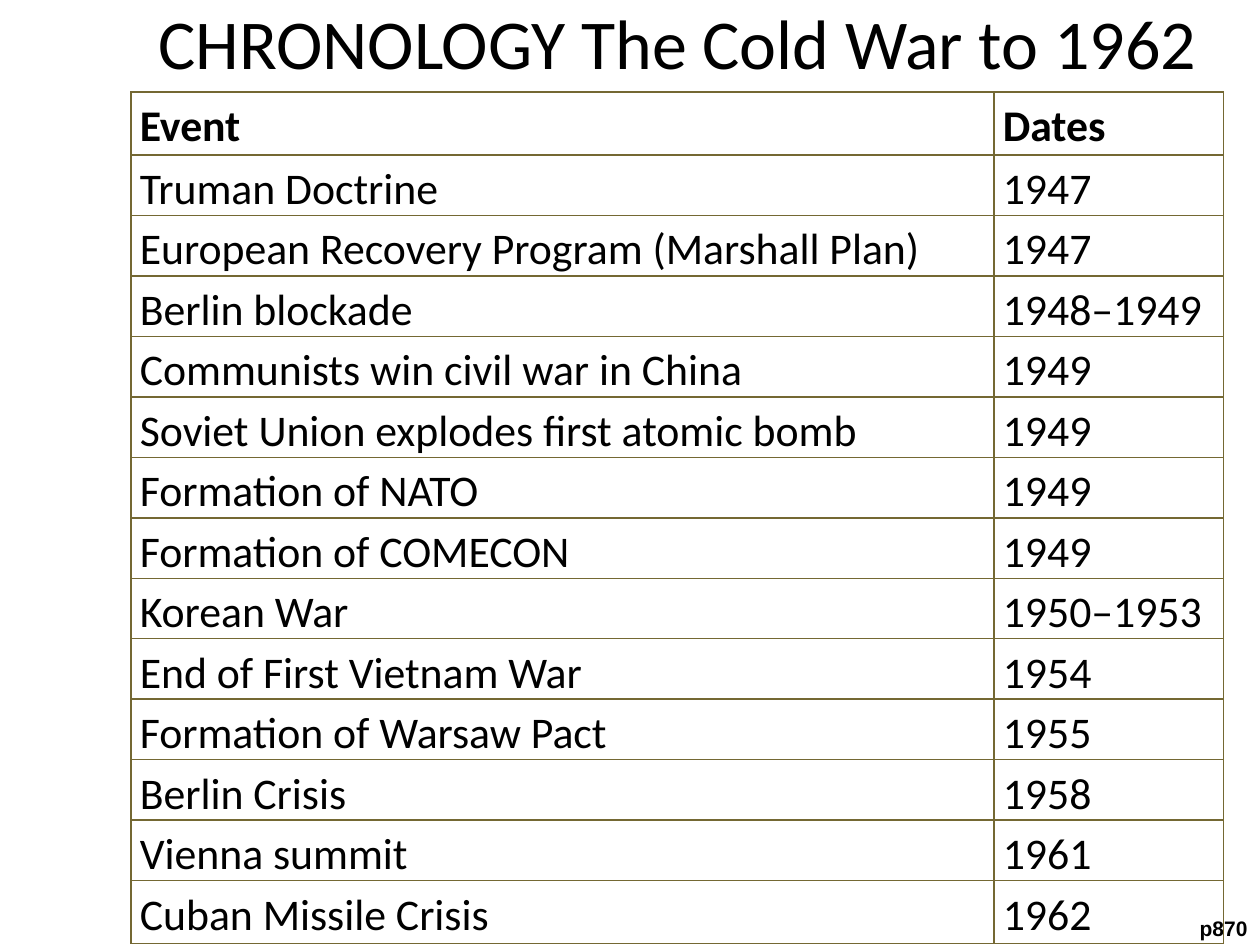
from dataclasses import dataclass

from lxml.etree import SubElement
from pptx import Presentation
from pptx.dml.color import RGBColor
from pptx.enum.text import MSO_ANCHOR as Anchor, PP_ALIGN as Align
from pptx.oxml.ns import qn
from pptx.util import Inches, Pt


@dataclass(frozen=True)
class Theme:
    ink: str = "000000"
    border: str = "746833"
    heading_font: str = "Calibri"
    note_font: str = "Arial"
    title_size: int = 40
    cell_size: int = 25
    note_size: int = 12
    border_width: int = 1
    line_spacing: float = 1.15


@dataclass(frozen=True)
class Box:
    left: float
    top: float
    width: float
    height: float

    def place(self):
        return [Inches(n) for n in (self.left, self.top, self.width, self.height)]


THEME = Theme()
WIDTH, HEIGHT = 10, 7.5
COLUMN_SHARES = (0.79, 0.21)
EDGE_ROW, BODY_ROW = 0.5, 0.48
TITLE_BOX = Box(0.75, 0.08, 9.25, 0.5)
TABLE_BOX = Box(1.04, 0.73, 8.67, 6.75)
NOTE_BOX = Box(9.37, 7.22, 0.63, 0.3)

EVENTS = [
    ("Event", "Dates"),
    ("Truman Doctrine", "1947"),
    ("European Recovery Program (Marshall Plan)", "1947"),
    ("Berlin blockade", "1948–1949"),
    ("Communists win civil war in China", "1949"),
    ("Soviet Union explodes first atomic bomb", "1949"),
    ("Formation of NATO", "1949"),
    ("Formation of COMECON", "1949"),
    ("Korean War", "1950–1953"),
    ("End of First Vietnam War", "1954"),
    ("Formation of Warsaw Pact", "1955"),
    ("Berlin Crisis", "1958"),
    ("Vienna summit", "1961"),
    ("Cuban Missile Crisis", "1962"),
]


def set_all(target, formats):
    for name, value in formats.items():
        setattr(target, name, value)


def write(frame, text, font, size, bold=False, **para_formats):
    para = frame.paragraphs[0]
    set_all(para, para_formats)
    span = para.add_run()
    span.text = text
    set_all(span.font, {"name": font, "size": Pt(size), "bold": bold})
    span.font.color.rgb = RGBColor.from_string(THEME.ink)


def add_borders(cell):
    properties = cell._tc.get_or_add_tcPr()
    for position, side in enumerate(("lnL", "lnR", "lnT", "lnB")):
        line = properties.makeelement(qn(f"a:{side}"), {"w": str(Pt(THEME.border_width))})
        fill = SubElement(line, qn("a:solidFill"))
        SubElement(fill, qn("a:srgbClr"), val=THEME.border)
        properties.insert(position, line)


def add_title(page, box):
    title = page.shapes.title
    title.left, title.top, title.width, title.height = box.place()
    set_all(title.text_frame, {"vertical_anchor": Anchor.MIDDLE, "word_wrap": True})
    write(title.text_frame, "CHRONOLOGY The Cold War to 1962",
          THEME.heading_font, THEME.title_size, alignment=Align.CENTER)


def add_page_note(page, box):
    frame = page.shapes.add_textbox(*box.place()).text_frame
    frame.word_wrap = False
    write(frame, "p870", THEME.note_font, THEME.note_size, bold=True, alignment=Align.RIGHT)


def add_chronology(page, box):
    last = len(EVENTS) - 1
    table = page.shapes.add_table(len(EVENTS), len(COLUMN_SHARES), *box.place()).table
    table.horz_banding = False
    for column, share in zip(table.columns, COLUMN_SHARES):
        column.width = Inches(box.width * share)
    margins = {"margin_left": Inches(0.07), "margin_right": Inches(0.07),
               "margin_top": 0, "margin_bottom": 0}
    for index, (row, texts) in enumerate(zip(table.rows, EVENTS)):
        row.height = Inches(EDGE_ROW if index in (0, last) else BODY_ROW)
        for cell, text in zip(row.cells, texts):
            set_all(cell, margins)
            cell.fill.background()
            add_borders(cell)
            write(cell.text_frame, text, THEME.heading_font, THEME.cell_size,
                  bold=index == 0, line_spacing=THEME.line_spacing)


def main():
    deck = Presentation()
    set_all(deck, {"slide_width": Inches(WIDTH), "slide_height": Inches(HEIGHT)})
    page = deck.slides.add_slide(deck.slide_layouts.get_by_name("Title Only"))
    add_title(page, TITLE_BOX)
    add_page_note(page, NOTE_BOX)
    add_chronology(page, TABLE_BOX)
    deck.save("out.pptx")


if __name__ == "__main__":
    main()
